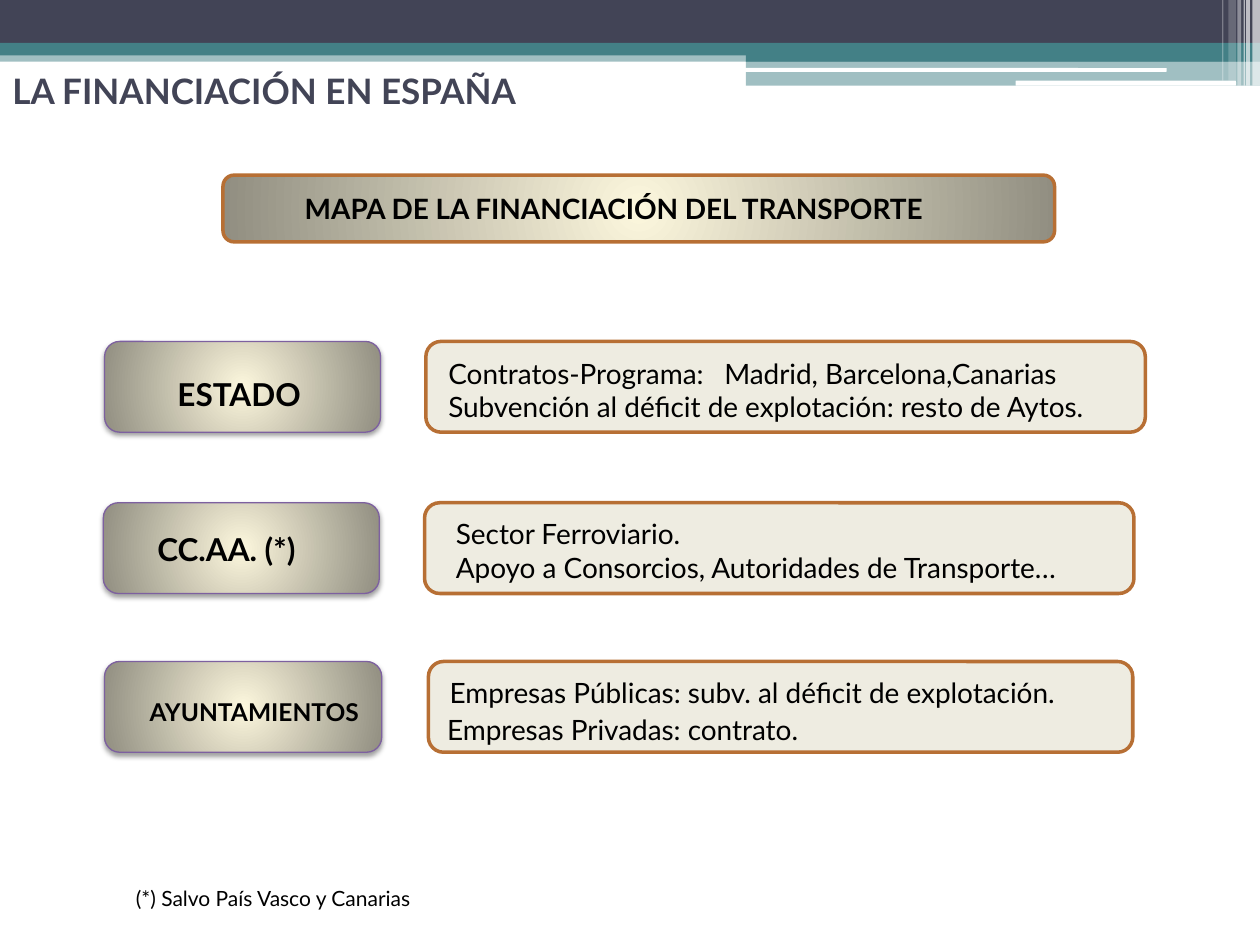
from lxml import etree
from pptx import Presentation
from pptx.dml.color import RGBColor
from pptx.enum import shapes, text
from pptx.oxml import parse_xml
from pptx.oxml.ns import nsdecls, qn
from pptx.util import Inches, Pt

FONT = "Lato"
COLORS = {
    "navy": "424456", "teal": "438086", "white": "FFFFFF", "black": "000000",
    "glow": "FCF7DD", "edge": "918E81", "panel": "EEECE1",
    "copper": "B76F34", "purple": "7D60A0",
}
RECT = shapes.MSO_SHAPE.RECTANGLE
ROUNDED = shapes.MSO_SHAPE.ROUNDED_RECTANGLE

# Header decoration: (left, top, width, height), colour, opacity in percent
BANDS = [
    ((0, 0.4, 10, 0.09), "teal", 50),
    ((0, 0, 10, 0.34), "navy", 100),
    ((0, 0.34, 10, 0.1), "teal", 100),
    ((5.92, 0.39, 4.08, 0.1), "teal", 100),
    ((5.92, 0.48, 4.08, 0.2), "teal", 50),
]
PILLS = [(5.91, 0.54, 3.35, 0.03), (8.06, 0.64, 1.75, 0.04)]
# Vertical stripes: left, width, height, opacity
STRIPES = [
    (9.94, 0.06, 0.68, 65), (9.89, 0.03, 0.68, 65), (9.87, 0.01, 0.68, 60),
    (9.82, 0.03, 0.68, 40), (9.75, 0.06, 0.64, 20), (9.7, 0.01, 0.64, 30),
]

TITLE = "LA FINANCIACIÓN EN ESPAÑA"
HEADING = "MAPA DE LA FINANCIACIÓN DEL TRANSPORTE"
FOOTNOTE = "(*) Salvo País Vasco y Canarias"

# Panel and label are (left, width); each text carries its own box
ROW_HEIGHT = 0.72
TAB_STOP = 2.19
ROWS = [
    {"top": 2.71, "panel": (3.38, 5.71), "label": (0.83, 2.19),
     "name": ("ESTADO", (1.31, 2.93, 1.39, 0.4), 18),
     "details": [
         ("Contratos-Programa:\tMadrid, Barcelona,Canarias", (3.46, 2.78, 5.35, 0.37)),
         ("Subvención al déficit de explotación: resto de Aytos.", (3.46, 3.04, 5.8, 0.37))]},
    {"top": 3.99, "panel": (3.37, 5.63), "label": (0.82, 2.19),
     "name": ("CC.AA. (*)", (1.15, 4.16, 1.82, 0.4), 18),
     "details": [
         ("Sector Ferroviario.", (3.52, 4.05, 4.89, 0.37)),
         ("Apoyo a Consorcios, Autoridades de Transporte…", (3.52, 4.32, 5.97, 0.37))]},
    {"top": 5.25, "panel": (3.4, 5.59), "label": (0.83, 2.2),
     "name": ("AYUNTAMIENTOS", (1.09, 5.48, 2.2, 0.34), 14),
     "details": [
         ("Empresas Públicas: subv. al déficit de explotación.", (3.47, 5.31, 6.25, 0.37)),
         ("Empresas Privadas: contrato.", (3.45, 5.61, 4.92, 0.37))]},
]


def rgb(name):
    return RGBColor.from_string(COLORS[name])


def add_box(parent, kind, box, fill, opacity=100, line=None, line_width=2):
    shape = parent.add_shape(kind, *map(Inches, box))
    shape.shadow.inherit = False
    shape.fill.solid()
    shape.fill.fore_color.rgb = rgb(fill)
    if opacity < 100:
        color = shape.fill._xPr.find(qn("a:solidFill"))[0]
        etree.SubElement(color, qn("a:alpha"), val=str(opacity * 1000))
    if line:
        shape.line.color.rgb = rgb(line)
        shape.line.width = Pt(line_width)
    else:
        shape.line.fill.background()
    return shape


def set_radial_fill(shape):
    """Replace the solid fill with a gradient from the centre outwards."""
    solid = shape._element.spPr.find(qn("a:solidFill"))
    stops = "".join(
        f'<a:gs pos="{position}"><a:srgbClr val="{COLORS[name]}"/></a:gs>'
        for position, name in ((0, "glow"), (100000, "edge")))
    solid.getparent().replace(solid, parse_xml(
        f'<a:gradFill {nsdecls("a")} rotWithShape="1"><a:gsLst>{stops}</a:gsLst>'
        '<a:path path="circle"><a:fillToRect l="50000" t="50000" r="50000" b="50000"/>'
        '</a:path></a:gradFill>'))


def add_drop_shadow(shape):
    effects = shape._element.spPr.find(qn("a:effectLst"))
    effects.append(parse_xml(
        f'<a:outerShdw {nsdecls("a")} blurRad="{Pt(3.1)}" dist="{Pt(1.6)}" dir="5400000" '
        f'rotWithShape="0"><a:srgbClr val="{COLORS["black"]}"><a:alpha val="38000"/>'
        '</a:srgbClr></a:outerShdw>'))


def add_text(parent, words, box, size, bold=False, color="black", wrap=True):
    shape = parent.add_textbox(*map(Inches, box))
    frame = shape.text_frame
    frame.word_wrap = wrap
    paragraph = frame.paragraphs[0]
    paragraph.text = words
    font = paragraph.font
    font.name, font.size, font.bold = FONT, Pt(size), bold
    font.color.rgb = rgb(color)
    if "\t" in words:
        tabs = parse_xml(f'<a:tabLst {nsdecls("a")}>'
                         f'<a:tab pos="{Inches(TAB_STOP)}" algn="l"/></a:tabLst>')
        paragraph._p.get_or_add_pPr().insert(0, tabs)
    return shape


def add_header(parent):
    for box, color, opacity in BANDS:
        add_box(parent, RECT, box, color, opacity)
    for box in PILLS:
        add_box(parent, ROUNDED, box, "white")
    for left, width, height, opacity in STRIPES:
        add_box(parent, RECT, (left, 0, width, height), "white", opacity)


def add_row(parent, row):
    group = parent.add_group_shape().shapes
    (panel_left, panel_width), (label_left, label_width) = row["panel"], row["label"]
    add_box(group, ROUNDED, (panel_left, row["top"], panel_width, ROW_HEIGHT),
            "panel", line="copper")
    label = add_box(group, ROUNDED, (label_left, row["top"], label_width, ROW_HEIGHT),
                    "glow", line="purple", line_width=0.75)
    set_radial_fill(label)
    add_drop_shadow(label)
    add_text(group, *row["name"], bold=True)
    for words, box in row["details"]:
        add_text(group, words, box, 16)


def main():
    presentation = Presentation()
    presentation.slide_width, presentation.slide_height = Inches(10), Inches(7.5)
    slide = presentation.slides.add_slide(presentation.slide_layouts[6])
    canvas = slide.shapes

    add_header(canvas)
    title = add_text(canvas, TITLE, (0, 0.13, 9, 1.17), 20, bold=True, color="navy")
    title.text_frame.vertical_anchor = text.MSO_ANCHOR.MIDDLE

    banner = add_box(canvas, ROUNDED, (1.77, 1.39, 6.6, 0.53), "glow", line="copper")
    set_radial_fill(banner)
    add_text(canvas, HEADING, (2.32, 1.47, 5.98, 0.37), 16, bold=True)

    for row in ROWS:
        add_row(canvas, row)
    add_text(canvas, FOOTNOTE, (0.98, 6.98, 2.48, 0.3), 12, wrap=False)
    presentation.save("out.pptx")


if __name__ == "__main__":
    main()
